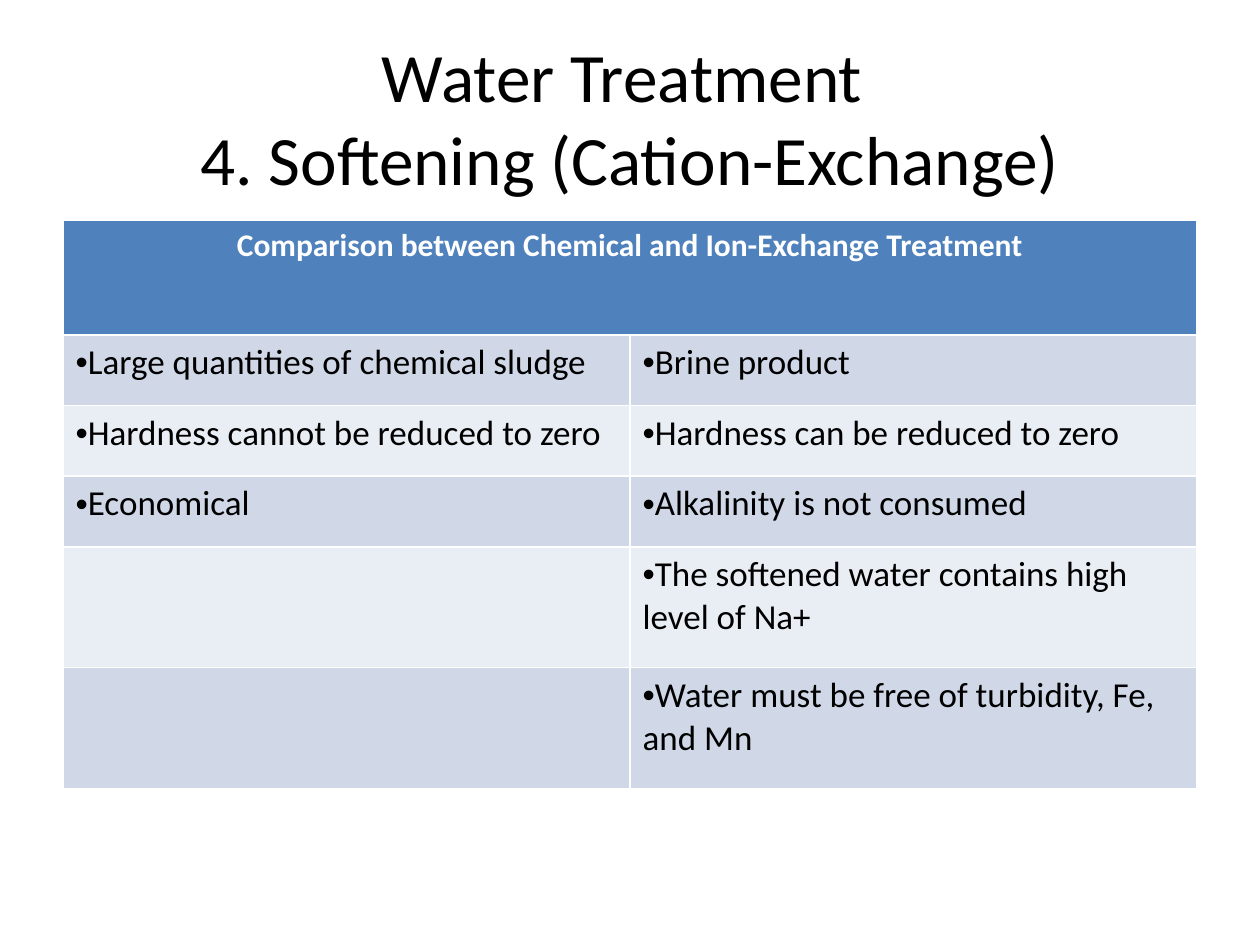
import pptx
import pptx.dml.color
import pptx.enum.text
import pptx.oxml.ns
import pptx.util
import lxml.etree

BLACK = pptx.dml.color.RGBColor(0x00, 0x00, 0x00)
WHITE = pptx.dml.color.RGBColor(0xFF, 0xFF, 0xFF)
HEADER_BLUE = pptx.dml.color.RGBColor(0x4F, 0x81, 0xBD)
BANDS = [
    pptx.dml.color.RGBColor(0xD0, 0xD8, 0xE8),
    pptx.dml.color.RGBColor(0xE9, 0xED, 0xF4),
]
FONT = "Calibri"

COMPARISON = [
    ("Large quantities of chemical sludge", "Brine product"),
    ("Hardness cannot be reduced to zero", "Hardness can be reduced to zero"),
    ("Economical", "Alkalinity is not consumed"),
    ("", "The softened water contains high level of Na+"),
    ("", "Water must be free of turbidity, Fe, and Mn"),
]
ROW_HEIGHTS = [0.91, 0.56, 0.56, 0.56, 0.96, 0.96]


def style_text(para, size, color, bold):
    para.font.name = FONT
    para.font.size = pptx.util.Pt(size)
    for span in para.runs:
        span.font.name = FONT
        span.font.size = pptx.util.Pt(size)
        span.font.color.rgb = color
        span.font.bold = bold


def add_bullet(para):
    properties = para._p.get_or_add_pPr()
    properties.set("marL", "0")
    properties.set("indent", "0")
    for tag, name, value in (("a:buFont", "typeface", "Arial"), ("a:buChar", "char", "•")):
        lxml.etree.SubElement(properties, pptx.oxml.ns.qn(tag)).set(name, value)


deck = pptx.Presentation()
deck.slide_width = pptx.util.Inches(10)
deck.slide_height = pptx.util.Inches(7.5)
page = deck.slides.add_slide(deck.slide_layouts[5])

margin = int(deck.slide_width * 0.05)
content_width = deck.slide_width - 2 * margin

title = page.shapes.title
title.left, title.top = margin, int(deck.slide_height * 0.04)
title.width, title.height = content_width, pptx.util.Inches(1.25)
title.text_frame.text = "Water Treatment \v4. Softening (Cation-Exchange)"
title.text_frame.vertical_anchor = pptx.enum.text.MSO_ANCHOR.MIDDLE
title.text_frame.paragraphs[0].alignment = pptx.enum.text.PP_ALIGN.CENTER
style_text(title.text_frame.paragraphs[0], 39.6, BLACK, False)

table = page.shapes.add_table(
    len(ROW_HEIGHTS), 2, margin, pptx.util.Inches(1.75),
    content_width, pptx.util.Inches(sum(ROW_HEIGHTS)),
).table
for row, height in zip(table.rows, ROW_HEIGHTS):
    row.height = pptx.util.Inches(height)

header = table.cell(0, 0)
header.merge(table.cell(0, 1))
header.fill.solid()
header.fill.fore_color.rgb = HEADER_BLUE
header.text_frame.text = "Comparison between Chemical and Ion-Exchange Treatment"
header.text_frame.paragraphs[0].alignment = pptx.enum.text.PP_ALIGN.CENTER
style_text(header.text_frame.paragraphs[0], 18, WHITE, True)

for row_index, statements in enumerate(COMPARISON):
    for column_index, statement in enumerate(statements):
        cell = table.cell(row_index + 1, column_index)
        cell.fill.solid()
        cell.fill.fore_color.rgb = BANDS[row_index % 2]
        if statement:
            cell.text_frame.text = statement
            para = cell.text_frame.paragraphs[0]
            add_bullet(para)
            style_text(para, 20, BLACK, False)

deck.save("out.pptx")
